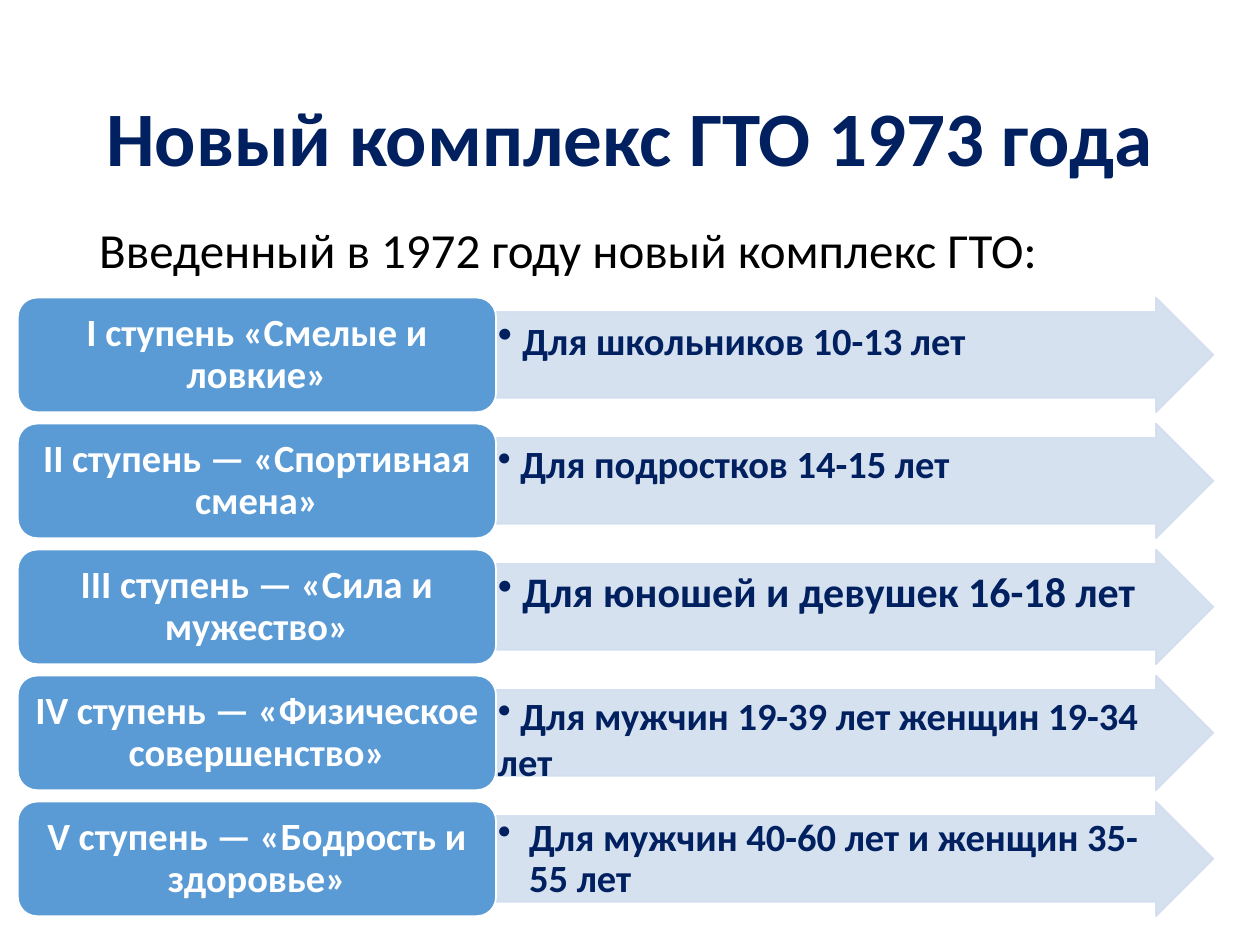
from dataclasses import dataclass

from lxml import etree
from pptx import Presentation
from pptx import util as u
from pptx.dml.color import RGBColor
from pptx.enum import shapes, text
from pptx.oxml.ns import qn


@dataclass(frozen=True)
class Theme:
    font: str = "Calibri"
    navy: str = "002060"
    black: str = "000000"
    white: str = "FFFFFF"
    label: str = "5B9BD5"
    arrow: str = "D2DEEF"
    arrow_opacity: int = 90
    title_size: int = 44
    intro_size: int = 28
    large_size: int = 24
    row_size: int = 22


@dataclass(frozen=True)
class Box:
    left: float
    top: float
    width: float
    height: float

    def lengths(self):
        return [u.Cm(n) for n in (self.left, self.top, self.width, self.height)]


THEME = Theme()
LARGE, NORMAL = THEME.large_size, THEME.row_size
STAGES = [
    ("I ступень «Смелые и ловкие»",
     [(" ", LARGE), ("Для школьников 10-13 лет", NORMAL)], 0),
    ("II ступень — «Спортивная смена»",
     [(" Для подростков 14-15 лет", NORMAL)], 0),
    ("III ступень — «Сила и мужество»",
     [(" Для юношей и девушек 16-18 лет", LARGE)], 0),
    ("IV ступень — «Физическое совершенство»",
     [(" Для мужчин 19-39 лет женщин 19-34 лет", NORMAL)], 0),
    ("V ступень — «Бодрость и здоровье»",
     [("Для мужчин 40-60 лет и женщин 35- 55 лет", NORMAL)], 0.63),
]


def apply(target, **values):
    for name, value in values.items():
        setattr(target, name, value)


def write(paragraph, runs, color, bold=True, **values):
    apply(paragraph, **values)
    for words, size in runs:
        run = paragraph.add_run()
        run.text = words
        apply(run.font, name=THEME.font, size=u.Pt(size), bold=bold)
        run.font.color.rgb = RGBColor.from_string(color)


def set_frame(shape, anchor, left=0.25, top=0.13, right=0.25, bottom=0.13):
    frame = shape.text_frame
    apply(frame, word_wrap=True, vertical_anchor=anchor,
          auto_size=text.MSO_AUTO_SIZE.NONE,
          margin_left=u.Cm(left), margin_top=u.Cm(top),
          margin_right=u.Cm(right), margin_bottom=u.Cm(bottom))
    return frame.paragraphs[0]


def add_block(slide, kind, box, fill, line):
    shape = slide.shapes.add_shape(kind, *box.lengths())
    shape.shadow.inherit = False
    shape.fill.solid()
    shape.fill.fore_color.rgb = RGBColor.from_string(fill)
    shape.line.width = u.Pt(1)
    shape.line.color.rgb = RGBColor.from_string(line)
    return shape


def set_opacity(shape, percent):
    for color in shape._element.spPr.iter(qn("a:srgbClr")):
        etree.SubElement(color, qn("a:alpha"), val=str(percent * 1000))


def add_bullet(paragraph, hanging):
    properties = paragraph._p.get_or_add_pPr()
    properties.set("marL", str(u.Cm(hanging)))
    properties.set("indent", str(-u.Cm(hanging)))
    etree.SubElement(properties, qn("a:buChar"), char="•")


def place_title(slide, box, words):
    title = slide.shapes.title
    left, top, width, height = box.lengths()
    apply(title, left=left, top=top, width=width, height=height)
    paragraph = set_frame(title, text.MSO_ANCHOR.MIDDLE)
    write(paragraph, [(words, THEME.title_size)], THEME.navy,
          alignment=text.PP_ALIGN.CENTER, line_spacing=0.9)


def place_intro(slide, box, words):
    shape = slide.shapes.add_textbox(*box.lengths())
    paragraph = set_frame(shape, text.MSO_ANCHOR.TOP)
    write(paragraph, [(words, THEME.intro_size)], THEME.black, bold=False,
          line_spacing=0.9)


def place_stage(slide, box, name, audience, hanging):
    label_width = box.width * 0.4
    arrow_box = Box(box.left + label_width, box.top,
                    box.width - label_width, box.height)
    arrow = add_block(slide, shapes.MSO_SHAPE.RIGHT_ARROW, arrow_box,
                      THEME.arrow, THEME.arrow)
    arrow.adjustments[0] = 0.75
    arrow.adjustments[1] = 0.5
    set_opacity(arrow, THEME.arrow_opacity)
    paragraph = set_frame(arrow, text.MSO_ANCHOR.TOP, 0.04, 0.04, 0.62, 0.04)
    add_bullet(paragraph, hanging)
    write(paragraph, audience, THEME.navy, alignment=text.PP_ALIGN.LEFT,
          level=1, line_spacing=0.9 if hanging else 1.0)

    label_box = Box(box.left, box.top, label_width, box.height)
    label = add_block(slide, shapes.MSO_SHAPE.ROUNDED_RECTANGLE, label_box,
                      THEME.label, THEME.white)
    paragraph = set_frame(label, text.MSO_ANCHOR.MIDDLE, 0.23, 0.12, 0.23, 0.12)
    write(paragraph, [(name, THEME.row_size)], THEME.white,
          alignment=text.PP_ALIGN.CENTER, line_spacing=0.9)


def place_stages(slide, box, stages):
    gap = 0.23
    height = (box.height - gap * (len(stages) - 1)) / len(stages)
    for index, stage in enumerate(stages):
        top = box.top + index * (height + gap)
        place_stage(slide, Box(box.left, top, box.width, height), *stage)


def main():
    presentation = Presentation()
    apply(presentation, slide_width=u.Cm(25.4), slide_height=u.Cm(19.05))
    slide = presentation.slides.add_slide(
        presentation.slide_layouts.get_by_name("Title Only"))
    place_title(slide, Box(1.75, 1.02, 21.9, 3.68), "Новый комплекс ГТО 1973 года")
    place_intro(slide, Box(1.75, 4.42, 21.9, 2.1),
                "Введенный в 1972 году новый комплекс ГТО:")
    place_stages(slide, Box(0.36, 6, 24.1, 12.47), STAGES)
    presentation.save("out.pptx")


if __name__ == "__main__":
    main()
